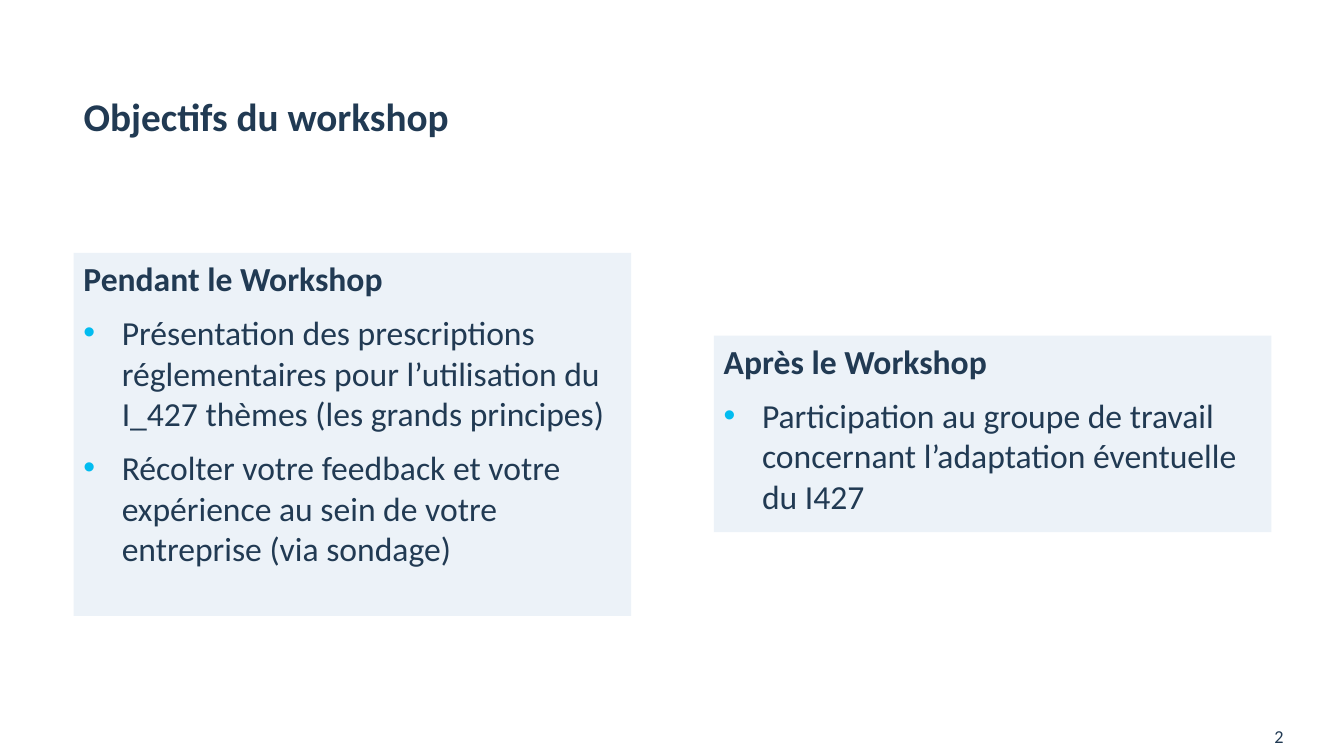
from lxml import etree
from pptx import Presentation
from pptx.dml.color import RGBColor
from pptx.enum import shapes, text
from pptx.oxml import ns
from pptx.util import Inches, Pt

NAVY = RGBColor(0x21, 0x3A, 0x53)
CYAN = RGBColor(0x02, 0xBC, 0xF0)
PALE_BLUE = RGBColor(0xEC, 0xF2, 0xF8)


def format_font(paragraph, size, bold=False):
    values = {"name": "Calibri", "size": Pt(size), "bold": bold}
    for run in paragraph.runs:
        for attribute, value in values.items():
            setattr(run.font, attribute, value)
        run.font.color.rgb = NAVY


def add_bullet(paragraph):
    properties = paragraph._p.get_or_add_pPr()
    properties.set("marL", str(Inches(0.38)))
    properties.set("indent", str(Inches(-0.38)))
    colour = etree.SubElement(properties, ns.qn("a:buClr"))
    etree.SubElement(colour, ns.qn("a:srgbClr"), val=str(CYAN))
    etree.SubElement(properties, ns.qn("a:buFont"), typeface="Arial")
    etree.SubElement(properties, ns.qn("a:buChar"), char="•")


deck = Presentation()
deck.slide_width, deck.slide_height = Inches(13.33), Inches(7.5)
slide = deck.slides.add_slide(deck.slide_layouts[5])

# Title
title = slide.shapes.title
title.left, title.top = Inches(0.73), Inches(0.92)
title.width, title.height = Inches(11.88), Inches(0.52)
title.text_frame.text = "Objectifs du workshop"
title.text_frame.auto_size = text.MSO_AUTO_SIZE.NONE
title.text_frame.vertical_anchor = text.MSO_ANCHOR.TOP
heading = title.text_frame.paragraphs[0]
heading.alignment = text.PP_ALIGN.LEFT
heading.line_spacing = 0.9
format_font(heading, 28, bold=True)

# Objectives during and after the workshop: left, top, height, heading, points
phases = [
    (0.73, 2.51, 3.6, "Pendant le Workshop", [
        "Présentation des prescriptions réglementaires pour l’utilisation du "
        "I_427 thèmes (les grands principes)",
        "Récolter votre feedback et votre expérience au sein de votre "
        "entreprise (via sondage)",
    ]),
    (7.08, 3.33, 1.95, "Après le Workshop", [
        "Participation au groupe de travail concernant l’adaptation "
        "éventuelle du I427",
    ]),
]
for left, top, height, phase, objectives in phases:
    panel = slide.shapes.add_shape(
        shapes.MSO_SHAPE.RECTANGLE,
        Inches(left), Inches(top), Inches(5.53), Inches(height))
    panel.shadow.inherit = False
    panel.fill.solid()
    panel.fill.fore_color.rgb = PALE_BLUE
    panel.line.fill.background()
    frame = panel.text_frame
    frame.word_wrap = True
    frame.vertical_anchor = text.MSO_ANCHOR.TOP
    frame.text = phase
    frame.paragraphs[0].alignment = text.PP_ALIGN.LEFT
    format_font(frame.paragraphs[0], 24, bold=True)
    for objective in objectives:
        point = frame.add_paragraph()
        point.text = objective
        point.alignment = text.PP_ALIGN.LEFT
        point.space_before = Pt(10)
        add_bullet(point)
        format_font(point, 24)

# Page number
page_number = slide.shapes.add_textbox(
    Inches(12.54), Inches(7.1), Inches(0.62), Inches(0.4)).text_frame
page_number.word_wrap = True
page_number.vertical_anchor = text.MSO_ANCHOR.MIDDLE
page_number.text = "2"
format_font(page_number.paragraphs[0], 13)

deck.save("out.pptx")
